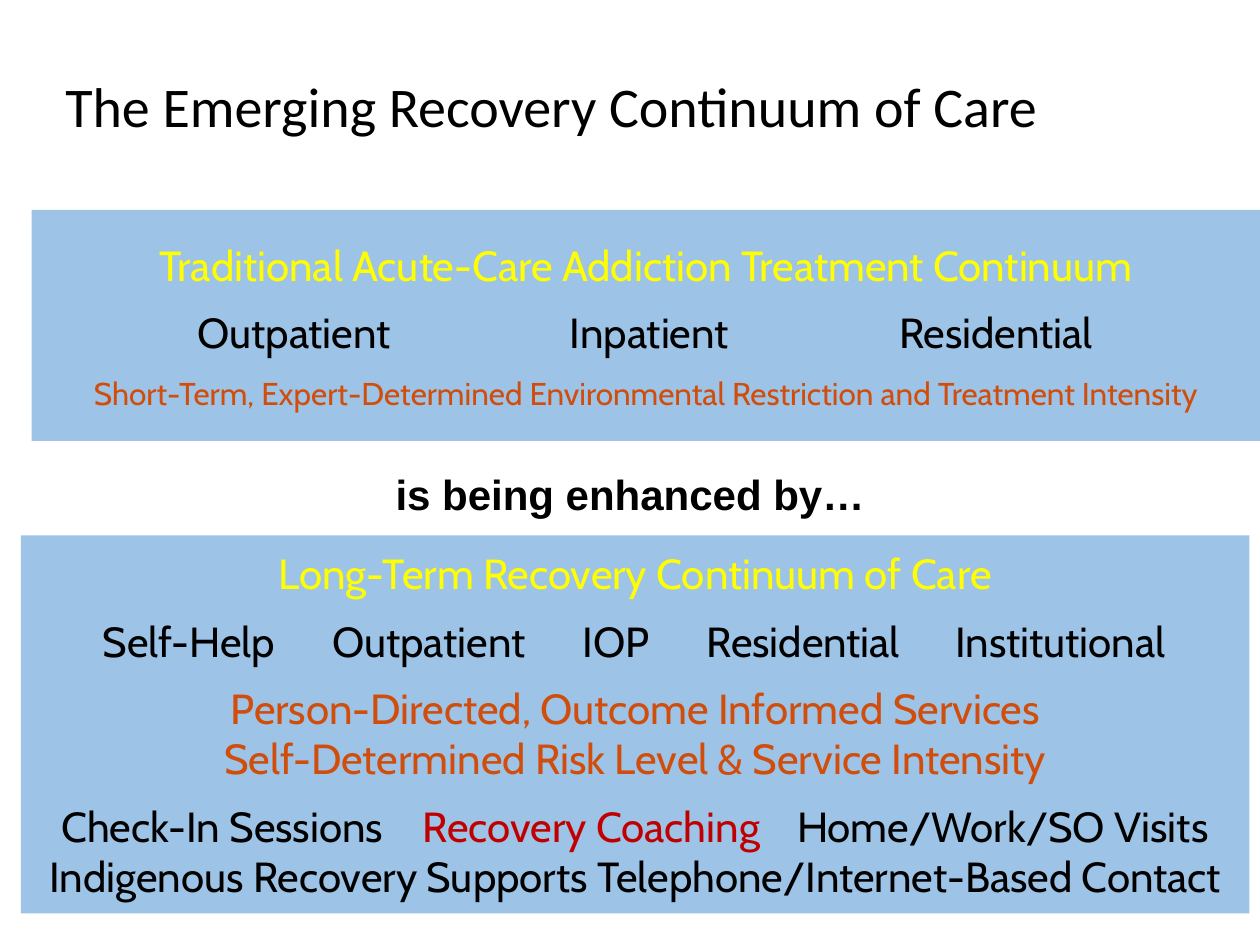
from dataclasses import dataclass

from lxml.etree import SubElement
from pptx import Presentation
from pptx.dml.color import RGBColor
from pptx.enum.shapes import MSO_SHAPE
from pptx.enum.text import MSO_ANCHOR, PP_ALIGN
from pptx.oxml.ns import qn
from pptx.slide import Slide
from pptx.text.text import TextFrame
from pptx.util import Pt

BLACK = RGBColor(0x00, 0x00, 0x00)
YELLOW = RGBColor(0xFF, 0xFF, 0x00)
ORANGE = RGBColor(0xD1, 0x4D, 0x0B)
RED = RGBColor(0xC0, 0x00, 0x00)
PANEL_BLUE = RGBColor(0x9D, 0xC3, 0xE6)

GROUP_GAP = 9.7
PANEL_WIDTH = 702
PANEL_FRAME = {
    "word_wrap": True,
    "vertical_anchor": MSO_ANCHOR.MIDDLE,
    "margin_left": 0,
    "margin_right": 0,
}
CAPTION_FRAME = {"word_wrap": True, "vertical_anchor": MSO_ANCHOR.TOP}


@dataclass(frozen=True)
class Phrase:
    text: str
    color: RGBColor = BLACK
    center: float | None = None  # distance from the left edge of the panel


@dataclass(frozen=True)
class Line:
    phrases: tuple[Phrase, ...]
    size: float = 24
    gap: float = 0
    font: str = "Cabin"
    bold: bool = False
    align: PP_ALIGN = PP_ALIGN.CENTER
    spacing: float = 1.0


@dataclass(frozen=True)
class Block:
    left: float
    top: float
    width: float
    height: float
    lines: tuple[Line, ...]


TITLE = Block(30.24, 41.76, 648, 68.4, (
    Line((Phrase("The Emerging Recovery Continuum of Care"),),
         size=32, font="Calibri", align=PP_ALIGN.LEFT, spacing=0.9),
))
TRANSITION = Block(168, 264, 384, 36.7, (
    Line((Phrase("is being enhanced by…"),), font="Arial", bold=True),
))
LONG_TERM = Block(12, 306, PANEL_WIDTH, 216, (
    Line((Phrase("Long-Term Recovery Continuum of Care", YELLOW),)),
    Line((Phrase("Self-Help", center=96), Phrase("Outpatient", center=233),
          Phrase("IOP", center=340), Phrase("Residential", center=447),
          Phrase("Institutional", center=594)), gap=GROUP_GAP),
    Line((Phrase("Person-Directed, Outcome Informed Services", ORANGE),), gap=GROUP_GAP),
    Line((Phrase("Self-Determined Risk Level & Service Intensity", ORANGE),)),
    Line((Phrase("Check-In Sessions", center=115), Phrase("Recovery Coaching", RED, 326),
          Phrase("Home/Work/SO Visits", center=561)), gap=GROUP_GAP),
    Line((Phrase("Indigenous Recovery Supports Telephone/Internet-Based Contact"),)),
))
ACUTE_CARE = Block(18, 120, PANEL_WIDTH, 132, (
    Line((Phrase("Traditional Acute-Care Addiction Treatment Continuum", YELLOW),)),
    Line((Phrase("Outpatient", center=150), Phrase("Inpatient", center=353),
          Phrase("Residential", center=551)), gap=GROUP_GAP),
    Line((Phrase("Short-Term, Expert-Determined Environmental Restriction "
                 "and Treatment Intensity", ORANGE),), size=18, gap=GROUP_GAP),
))


def apply_format(target: object, values: dict) -> None:
    for name, value in values.items():
        setattr(target, name, value)


def write_lines(frame: TextFrame, lines: tuple[Line, ...]) -> None:
    """Write each line as a paragraph, centring spread-out phrases on tab stops."""
    for index, line in enumerate(lines):
        paragraph = frame.paragraphs[0] if index == 0 else frame.add_paragraph()
        stops = [phrase.center for phrase in line.phrases if phrase.center is not None]
        apply_format(paragraph, {
            "alignment": PP_ALIGN.LEFT if stops else line.align,
            "space_before": Pt(line.gap),
            "line_spacing": line.spacing,
        })
        if stops:
            tab_list = SubElement(paragraph._p.get_or_add_pPr(), qn("a:tabLst"))
            for stop in stops:
                SubElement(tab_list, qn("a:tab"), pos=str(Pt(stop)), algn="ctr")
        for phrase in line.phrases:
            run = paragraph.add_run()
            run.text = phrase.text if phrase.center is None else f"\t{phrase.text}"
            apply_format(run.font, {
                "name": line.font, "size": Pt(line.size), "bold": line.bold,
            })
            run.font.color.rgb = phrase.color


def bounds(block: Block) -> tuple[Pt, ...]:
    return tuple(Pt(v) for v in (block.left, block.top, block.width, block.height))


def add_panel(slide: Slide, block: Block) -> None:
    panel = slide.shapes.add_shape(MSO_SHAPE.RECTANGLE, *bounds(block))
    panel.shadow.inherit = False
    panel.fill.solid()
    panel.fill.fore_color.rgb = PANEL_BLUE
    panel.line.fill.background()
    apply_format(panel.text_frame, PANEL_FRAME)
    write_lines(panel.text_frame, block.lines)


def add_caption(slide: Slide, block: Block) -> None:
    caption = slide.shapes.add_textbox(*bounds(block))
    apply_format(caption.text_frame, CAPTION_FRAME)
    write_lines(caption.text_frame, block.lines)


def main() -> None:
    presentation = Presentation()
    apply_format(presentation, {"slide_width": Pt(720), "slide_height": Pt(540)})
    slide = presentation.slides.add_slide(presentation.slide_layouts[6])
    add_caption(slide, TITLE)
    add_panel(slide, LONG_TERM)
    add_panel(slide, ACUTE_CARE)
    add_caption(slide, TRANSITION)
    presentation.save("out.pptx")


if __name__ == "__main__":
    main()
